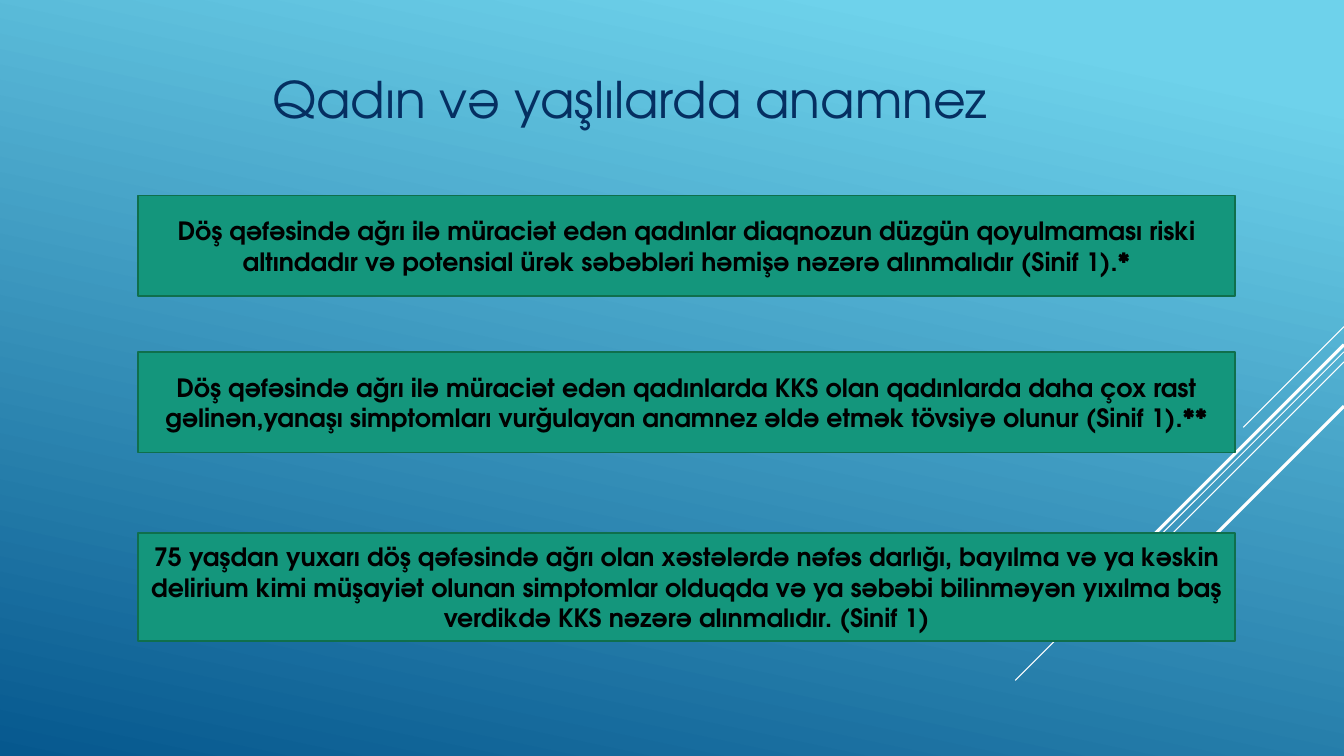
from lxml import etree
from pptx import Presentation
from pptx.dml.color import RGBColor
from pptx.enum import shapes, text
from pptx.oxml.ns import qn
from pptx.util import Inches, Pt

FONT = "TeX Gyre Adventor"
SKY = RGBColor(0x6E, 0xD2, 0xEB)
DEEP_BLUE = RGBColor(0x06, 0x58, 0x8E)
NAVY = RGBColor(0x05, 0x2F, 0x61)
GREEN = RGBColor(0x14, 0x96, 0x7C)
DARK_GREEN = RGBColor(0x0F, 0x6F, 0x4C)
WHITE = RGBColor(0xFF, 0xFF, 0xFF)
BLACK = RGBColor(0, 0, 0)

SLIDE_WIDTH = 13.33
TITLE = "Qadın və yaşlılarda anamnez"

# top, horizontal and vertical run, line width
RAYS = [
    (3.24, 1.0, 0.75),
    (3.49, 3.26, 0.75),
    (3.59, 2.07, 0.75),
    (3.42, 1.91, 2.25),
    (4.03, 1.39, 2.25),
]

# top, height, wording
STATEMENTS = [
    (1.94, 1, "Döş qəfəsində ağrı ilə müraciət edən qadınlar diaqnozun düzgün "
     "qoyulmaması riski altındadır və potensial ürək səbəbləri həmişə nəzərə "
     "alınmalıdır (Sinif 1).*"),
    (3.49, 1, "Döş qəfəsində ağrı ilə müraciət edən qadınlarda KKS olan "
     "qadınlarda daha çox rast gəlinən,yanaşı simptomları vurğulayan anamnez "
     "əldə etmək tövsiyə olunur (Sinif 1).**"),
    (5.29, 1.07, "75 yaşdan yuxarı döş qəfəsində ağrı olan xəstələrdə nəfəs "
     "darlığı, bayılma və ya kəskin delirium kimi müşayiət olunan simptomlar "
     "olduqda və ya səbəbi bilinməyən yıxılma baş verdikdə KKS nəzərə "
     "alınmalıdır. (Sinif 1)"),
]


def write(frame, wording, size, color, align, bold=False):
    frame.text = wording
    frame.word_wrap = True
    para = frame.paragraphs[0]
    para.alignment = align
    font = para.runs[0].font
    font.name, font.size, font.bold = FONT, Pt(size), bold
    font.color.rgb = color


def paint_background(page):
    fill = page.background.fill
    fill.gradient()
    fill.gradient_angle = 360 - 102
    for stop, position, color in zip(fill.gradient_stops, (0.1, 1), (SKY, DEEP_BLUE)):
        stop.position = position
        stop.color.rgb = color


def add_ray(page, top, run, width):
    ray = page.shapes.add_connector(
        shapes.MSO_CONNECTOR.STRAIGHT, Inches(SLIDE_WIDTH), Inches(top),
        Inches(SLIDE_WIDTH - run), Inches(top + run))
    ray.line.color.rgb = WHITE
    ray.line.width = Pt(width)
    etree.SubElement(ray._element.spPr, qn("a:effectLst"))


def place_title(page):
    title = page.shapes.title
    title.left, title.top = Inches(1.24), Inches(0.27)
    title.width, title.height = Inches(10.92), Inches(1.06)
    frame = title.text_frame
    write(frame, TITLE, 36, NAVY, text.PP_ALIGN.LEFT)
    frame.auto_size = text.MSO_AUTO_SIZE.NONE
    frame.vertical_anchor = text.MSO_ANCHOR.BOTTOM
    frame.margin_left = Inches(1.46)


def add_statement(page, top, height, wording):
    box = page.shapes.add_shape(
        shapes.MSO_SHAPE.RECTANGLE, Inches(1.37), Inches(top),
        Inches(10.88), Inches(height))
    box.shadow.inherit = False
    box.fill.solid()
    box.fill.fore_color.rgb = GREEN
    box.line.color.rgb = DARK_GREEN
    box.line.width = Pt(1.25)
    box.text_frame.vertical_anchor = text.MSO_ANCHOR.MIDDLE
    write(box.text_frame, wording, 18, BLACK, text.PP_ALIGN.CENTER, bold=True)


def main():
    """Build the slide on history taking in women and the elderly."""
    deck = Presentation()
    deck.slide_width, deck.slide_height = Inches(SLIDE_WIDTH), Inches(7.5)
    page = deck.slides.add_slide(deck.slide_layouts[5])
    paint_background(page)
    for ray in RAYS:
        add_ray(page, *ray)
    place_title(page)
    for statement in STATEMENTS:
        add_statement(page, *statement)
    deck.save("out.pptx")


if __name__ == "__main__":
    main()
